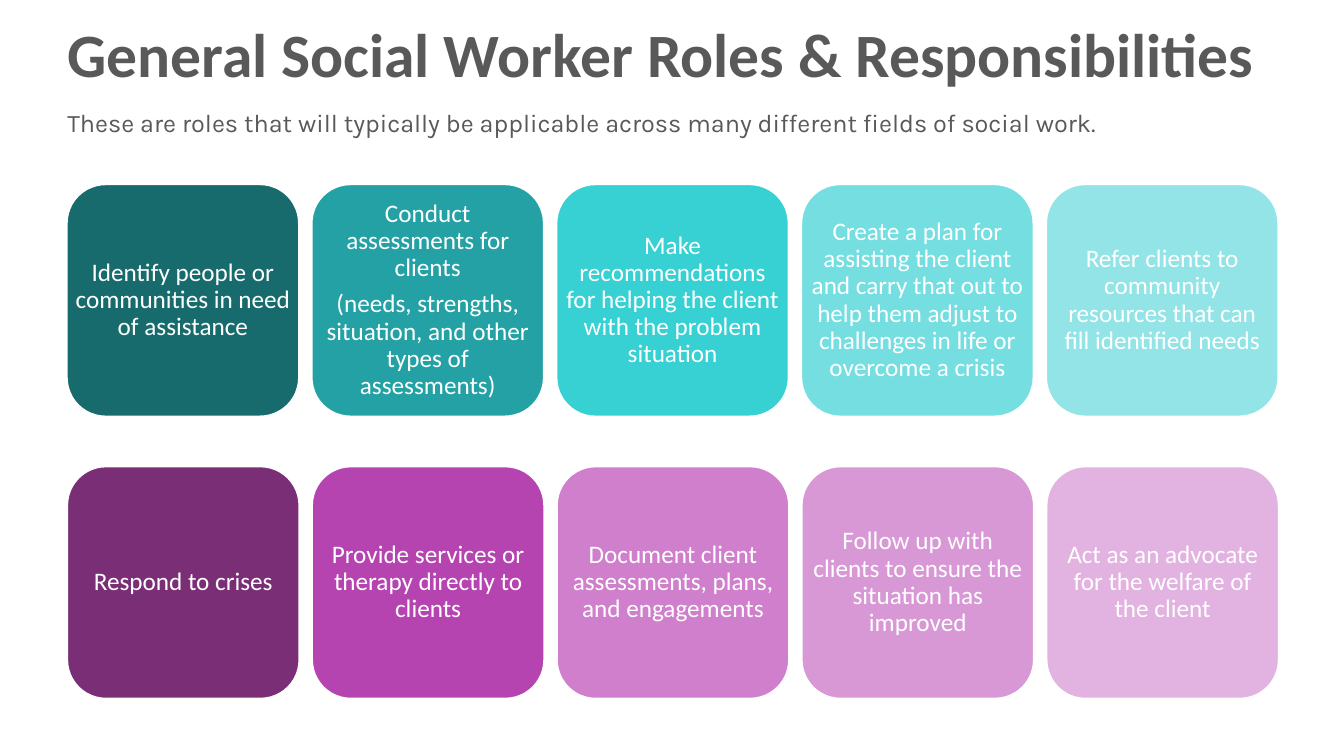
from pptx import Presentation
from pptx.dml.color import RGBColor
from pptx.enum import shapes, text
from pptx.util import Cm, Pt

GREY = RGBColor(0x59, 0x59, 0x59)
WHITE = RGBColor(0xFF, 0xFF, 0xFF)
TEALS = [RGBColor.from_string(shade) for shade in
         ("186B6D", "24A1A4", "37D0D3", "75DEE1", "92E4E6")]
PURPLES = [RGBColor.from_string(shade) for shade in
           ("792E76", "B644B0", "CF7FCB", "D898D5", "E2B2E0")]

CLIENT_ROLES = [
    ["Identify people or communities in need of assistance"],
    ["Conduct assessments for clients",
     "(needs, strengths, situation, and other types of assessments)"],
    ["Make recommendations for helping the client with the problem situation"],
    ["Create a plan for assisting the client and carry that out to help them "
     "adjust to challenges in life or overcome a crisis"],
    ["Refer clients to community resources that can fill identified needs"],
]
SERVICE_ROLES = [
    ["Respond to crises"],
    ["Provide services or therapy directly to clients"],
    ["Document client assessments, plans, and engagements"],
    ["Follow up with clients to ensure the situation has improved"],
    ["Act as an advocate for the welfare of the client"],
]

TILE = Cm(5.84)
PITCH = Cm(6.17)


def add_text(page, left, top, width, height, lines, size, font, colour,
             bold=False, spacing=1.0):
    """Place a wrapping text box with one paragraph per line."""
    box = page.shapes.add_textbox(left, top, width, height)
    frame = box.text_frame
    frame.word_wrap = True
    frame.text = "\n".join(lines)
    for para in frame.paragraphs:
        para.line_spacing = spacing
        for span in para.runs:
            span.font.size = Pt(size)
            span.font.name = font
            span.font.bold = bold
            span.font.color.rgb = colour
    return frame


def add_heading(page, left, top, width):
    # Title
    title = add_text(page, left, top, width, Cm(2.84),
                     ["General Social Worker Roles & Responsibilities"],
                     44, "Calibri", GREY, bold=True, spacing=0.9)
    title.vertical_anchor = text.MSO_ANCHOR.MIDDLE
    # Subtitle
    add_text(page, left, top + Cm(2.54), width + Cm(0.8), Cm(1.02),
             ["These are roles that will typically be applicable across "
              "many different fields of social work."],
             18, "Karla", GREY)


def add_tile(page, left, top, lines, colour):
    # Rounded square
    tile = page.shapes.add_shape(shapes.MSO_SHAPE.ROUNDED_RECTANGLE,
                                 left, top, TILE, TILE)
    tile.shadow.inherit = False
    tile.fill.solid()
    tile.fill.fore_color.rgb = colour
    tile.line.color.rgb = WHITE
    tile.line.width = Pt(1)
    # Label, wider than the text area of the rounded square
    side, above = Cm(0.15), Cm(0.28)
    frame = add_text(page, left + side, top + above,
                     TILE - 2 * side, TILE - 2 * above,
                     lines, 18, "Calibri", WHITE, spacing=0.9)
    frame.vertical_anchor = text.MSO_ANCHOR.MIDDLE
    frame.margin_left = frame.margin_right = Cm(0.05)
    frame.margin_top = frame.margin_bottom = Cm(0.05)
    for para in frame.paragraphs:
        para.alignment = text.PP_ALIGN.CENTER
        para.space_after = Pt(6.3)


def add_role_row(page, left, top, roles, colours):
    for column, (lines, colour) in enumerate(zip(roles, colours)):
        add_tile(page, left + column * PITCH, top, lines, colour)


def main():
    deck = Presentation()
    deck.slide_width, deck.slide_height = Cm(33.87), Cm(19.05)
    page = deck.slides.add_slide(deck.slide_layouts[6])
    add_heading(page, Cm(1.45), Cm(0.03), Cm(30.58))
    add_role_row(page, Cm(1.69), Cm(4.65), CLIENT_ROLES, TEALS)
    add_role_row(page, Cm(1.7), Cm(11.76), SERVICE_ROLES, PURPLES)
    deck.save("out.pptx")


if __name__ == "__main__":
    main()
